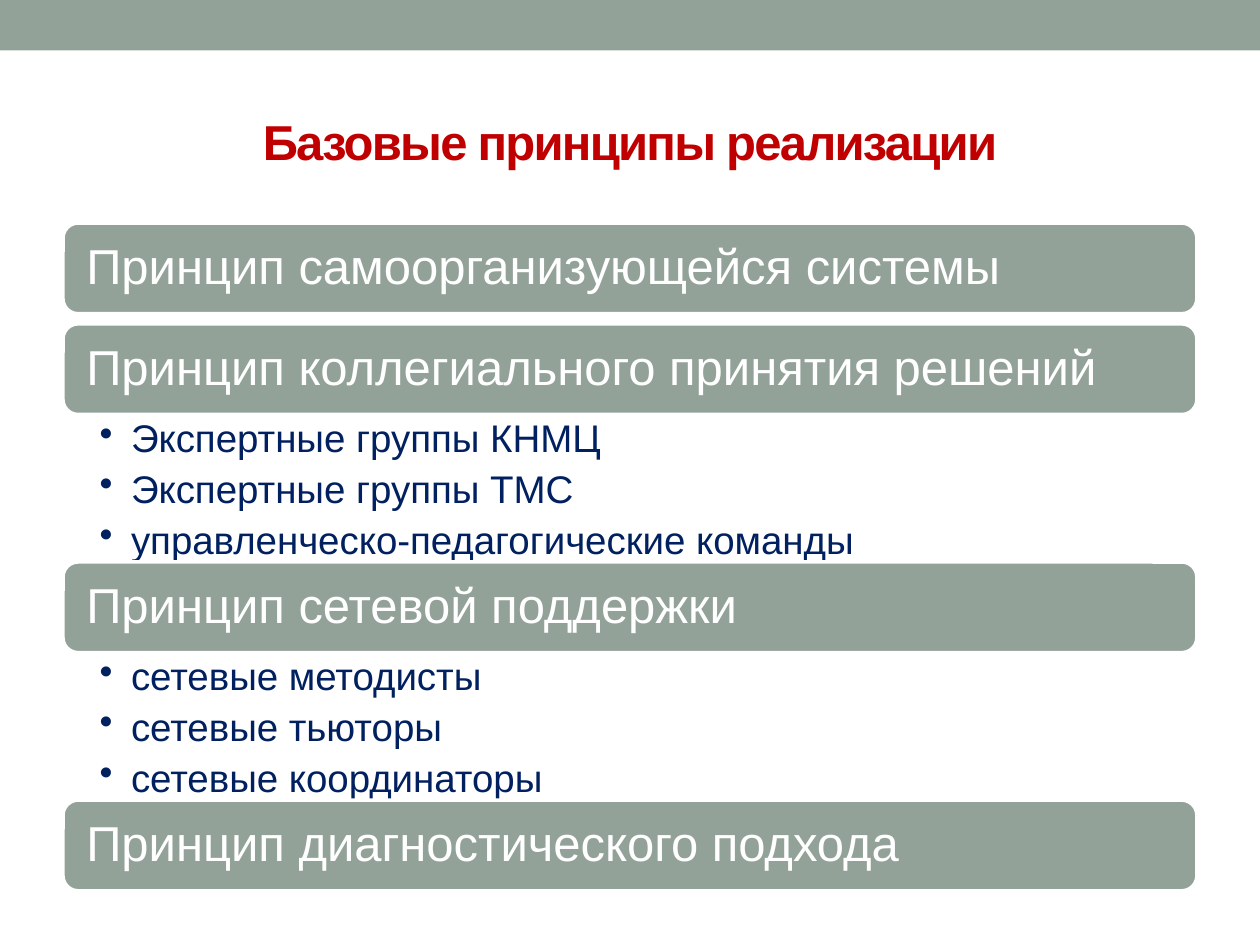
from lxml import etree
from pptx import Presentation
from pptx.dml.color import RGBColor
from pptx.enum.shapes import MSO_SHAPE
from pptx.enum.text import MSO_ANCHOR, PP_ALIGN
from pptx.oxml.ns import qn
from pptx.util import Inches, Pt

RECT, ROUND = MSO_SHAPE.RECTANGLE, MSO_SHAPE.ROUNDED_RECTANGLE
MIDDLE, TOP = MSO_ANCHOR.MIDDLE, MSO_ANCHOR.TOP
LEFT, CENTER = PP_ALIGN.LEFT, PP_ALIGN.CENTER

SAGE = RGBColor(0x93, 0xA2, 0x99)
WHITE = RGBColor(0xFF, 0xFF, 0xFF)
RED = RGBColor(0xC0, 0x00, 0x00)
NAVY = RGBColor(0x00, 0x20, 0x60)

EDGE, WIDTH = 0.5, 9
START, BAR, GAP, LIST = 1.77, 0.72, 0.08, 1.17

# Each principle with its points
ITEMS = [
    ("Принцип самоорганизующейся системы", []),
    ("Принцип коллегиального принятия решений",
     ["Экспертные группы КНМЦ", "Экспертные группы ТМС",
      "управленческо-педагогические команды"]),
    ("Принцип сетевой поддержки",
     ["сетевые методисты", "сетевые тьюторы", "сетевые координаторы"]),
    ("Принцип диагностического подхода", []),
]


def add_run(para, text, size, color, bold=False):
    run = para.add_run()
    run.text = text
    font = run.font
    font.name, font.size, font.bold = "Arial", Pt(size), bold
    font.color.rgb = color
    return run


def set_frame(frame, anchor, left, top, right, bottom):
    frame.word_wrap = True
    frame.vertical_anchor = anchor
    frame.margin_left, frame.margin_top = Inches(left), Inches(top)
    frame.margin_right, frame.margin_bottom = Inches(right), Inches(bottom)


def add_block(slide, kind, left, top, width, height):
    block = slide.shapes.add_shape(
        kind, Inches(left), Inches(top), Inches(width), Inches(height))
    block.shadow.inherit = False
    block.fill.solid()
    block.fill.fore_color.rgb = SAGE
    block.line.fill.background()
    return block


def add_title(slide, text):
    title = slide.shapes.title
    title.left, title.top = Inches(EDGE), Inches(0.58)
    title.width, title.height = Inches(WIDTH), Inches(1.08)
    title.text_frame.vertical_anchor = MIDDLE
    para = title.text_frame.paragraphs[0]
    para.alignment = CENTER
    run = add_run(para, text, 28, RED, True)
    run.font._element.set("spc", "-100")


def add_bar(slide, top, text):
    bar = add_block(slide, ROUND, EDGE, top, WIDTH, BAR)
    bar.line.color.rgb = WHITE
    bar.line.width = Pt(2.08)
    set_frame(bar.text_frame, MIDDLE, 0.15, 0.12, 0.15, 0.12)
    para = bar.text_frame.paragraphs[0]
    para.alignment = LEFT
    para.line_spacing = 0.9
    add_run(para, text, 28, WHITE)


def add_list(slide, top, points):
    box = slide.shapes.add_textbox(
        Inches(EDGE), Inches(top), Inches(WIDTH), Inches(LIST))
    frame = box.text_frame
    set_frame(frame, TOP, 0.29, 0.04, 0.22, 0.04)
    for i, point in enumerate(points):
        para = frame.add_paragraph() if i else frame.paragraphs[0]
        para.level = 1
        para.line_spacing = 0.9
        para.space_after = Pt(5.2)
        # Hanging bullet
        props = para._p.get_or_add_pPr()
        props.set("marL", str(Inches(0.25)))
        props.set("indent", str(-Inches(0.25)))
        etree.SubElement(props, qn("a:buChar")).set("char", "•")
        add_run(para, point, 22, NAVY)


def main():
    deck = Presentation()
    deck.slide_width, deck.slide_height = Inches(10), Inches(7.5)
    slide = deck.slides.add_slide(deck.slide_layouts[5])

    # Top band and title
    add_block(slide, RECT, 0, 0, 10, 0.4)
    add_title(slide, "Базовые принципы реализации")

    # Bars, each followed by its list or a gap
    top = START
    for name, points in ITEMS:
        add_bar(slide, top, name)
        top += BAR
        if points:
            add_list(slide, top, points)
        top += LIST if points else GAP

    deck.save("out.pptx")


if __name__ == "__main__":
    main()
